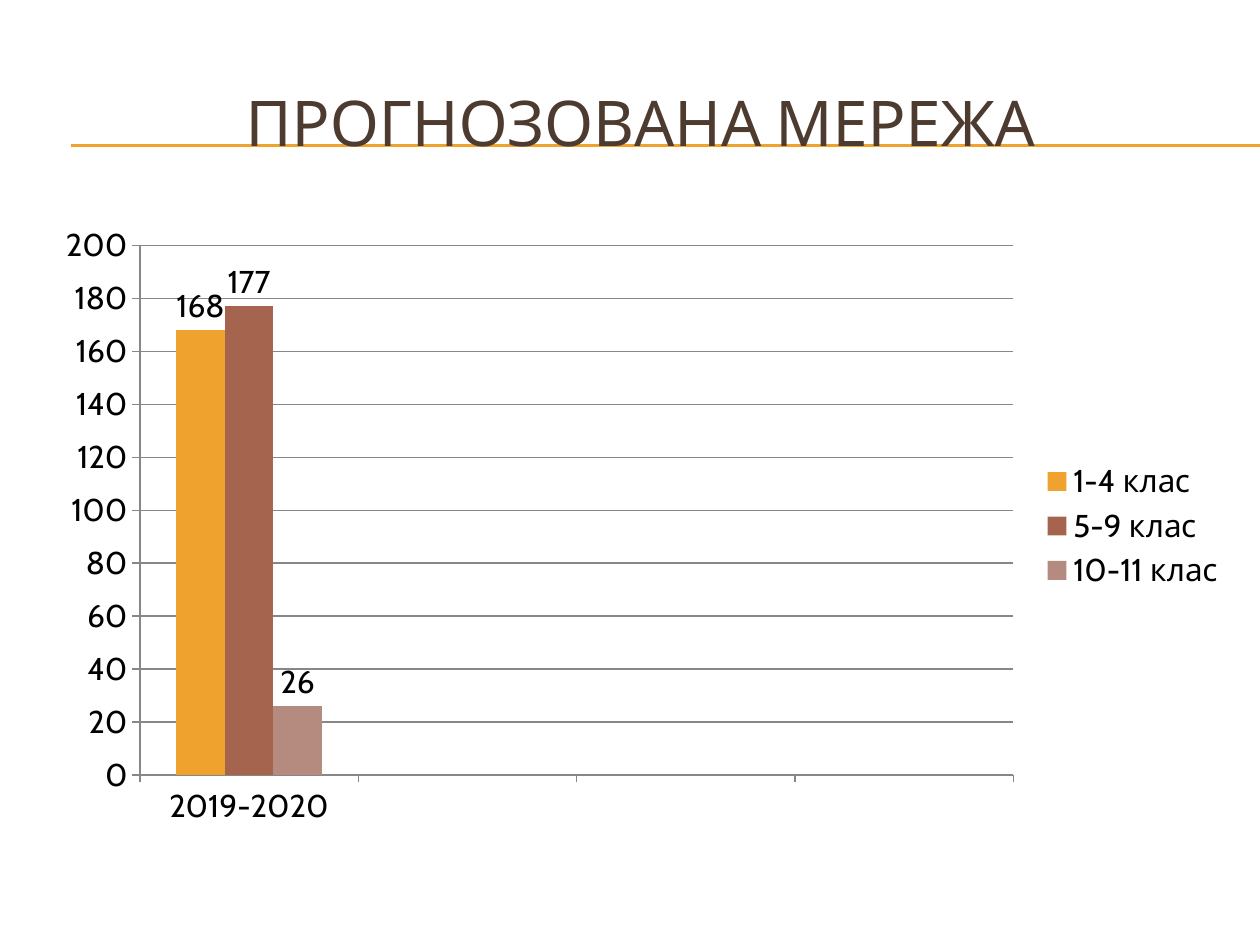
from dataclasses import dataclass

import lxml.etree
import pptx
import pptx.chart.data
import pptx.dml.color
import pptx.enum.chart
import pptx.enum.shapes
import pptx.enum.text
import pptx.oxml.ns
import pptx.util

PX_PER_INCH = 126
FONT = "Cabin"
ORANGE = pptx.dml.color.RGBColor(0xF0, 0xA2, 0x2E)
RUST = pptx.dml.color.RGBColor(0xA5, 0x64, 0x4E)
ROSE = pptx.dml.color.RGBColor(0xB5, 0x8B, 0x80)
BROWN = pptx.dml.color.RGBColor(0x4E, 0x3B, 0x30)
GRAY = pptx.dml.color.RGBColor(0x87, 0x87, 0x87)
BLACK = pptx.dml.color.RGBColor(0, 0, 0)


@dataclass
class GradeGroup:
    name: str
    pupils: int
    color: pptx.dml.color.RGBColor


YEARS = ["2019-2020", "", "", ""]
GRADE_GROUPS = [
    GradeGroup("1-4 клас", 168, ORANGE),
    GradeGroup("5-9 клас", 177, RUST),
    GradeGroup("10-11 клас", 26, ROSE),
]
RULE_TOPS = [145, 146]


def px(length: int) -> pptx.util.Emu:
    return pptx.util.Emu(length * 914400 // PX_PER_INCH)


def add_rule(slide, top: int) -> None:
    """Draw a thin line from the left margin to the slide's right edge."""
    rule = slide.shapes.add_connector(
        pptx.enum.shapes.MSO_CONNECTOR.STRAIGHT, px(71), px(top), px(1260), px(top)
    )
    rule.line.color.rgb = ORANGE
    rule.line.width = pptx.util.Pt(0.75)
    lxml.etree.SubElement(rule._element.spPr, pptx.oxml.ns.qn("a:effectLst"))


def add_title(slide, text: str) -> None:
    box = slide.shapes.add_textbox(px(42), px(63), px(1197), px(116))
    frame = box.text_frame
    frame.word_wrap = True
    frame.vertical_anchor = pptx.enum.text.MSO_ANCHOR.MIDDLE
    paragraph = frame.paragraphs[0]
    paragraph.alignment = pptx.enum.text.PP_ALIGN.CENTER
    run = paragraph.add_run()
    run.text = text
    run.font.name = FONT
    run.font.size = pptx.util.Pt(36)
    run.font.color.rgb = BROWN


def style_axis(axis) -> None:
    axis.format.line.color.rgb = GRAY
    axis.major_tick_mark = pptx.enum.chart.XL_TICK_MARK.OUTSIDE
    axis.minor_tick_mark = pptx.enum.chart.XL_TICK_MARK.NONE


def add_pupil_chart(slide, groups: list[GradeGroup]) -> None:
    data = pptx.chart.data.CategoryChartData()
    data.categories = YEARS
    for group in groups:
        data.add_series(group.name, [group.pupils] + [None] * (len(YEARS) - 1))
    chart = slide.shapes.add_chart(
        pptx.enum.chart.XL_CHART_TYPE.COLUMN_CLUSTERED,
        px(42), px(214), px(1197), px(624), data,
    ).chart
    chart.has_title = False
    chart.font.name = FONT
    chart.font.size = pptx.util.Pt(18)
    chart.font.color.rgb = BLACK
    chart.has_legend = True
    chart.legend.position = pptx.enum.chart.XL_LEGEND_POSITION.RIGHT
    chart.legend.include_in_layout = False

    style_axis(chart.category_axis)
    style_axis(chart.value_axis)
    chart.value_axis.minimum_scale = 0
    chart.value_axis.maximum_scale = 200
    chart.value_axis.major_unit = 20
    chart.value_axis.major_gridlines.format.line.color.rgb = GRAY

    plot = chart.plots[0]
    plot.vary_by_categories = False
    plot.gap_width = 150
    for series, group in zip(plot.series, groups):
        series.format.fill.solid()
        series.format.fill.fore_color.rgb = group.color
        series.data_labels.show_value = True
        series.data_labels.position = pptx.enum.chart.XL_LABEL_POSITION.OUTSIDE_END


def main() -> None:
    presentation = pptx.Presentation()
    presentation.slide_width = px(1260)
    presentation.slide_height = px(945)
    slide = presentation.slides.add_slide(presentation.slide_layouts[6])
    for top in RULE_TOPS:
        add_rule(slide, top)
    add_title(slide, "ПРОГНОЗОВАНА МЕРЕЖА")
    add_pupil_chart(slide, GRADE_GROUPS)
    presentation.save("out.pptx")


if __name__ == "__main__":
    main()
